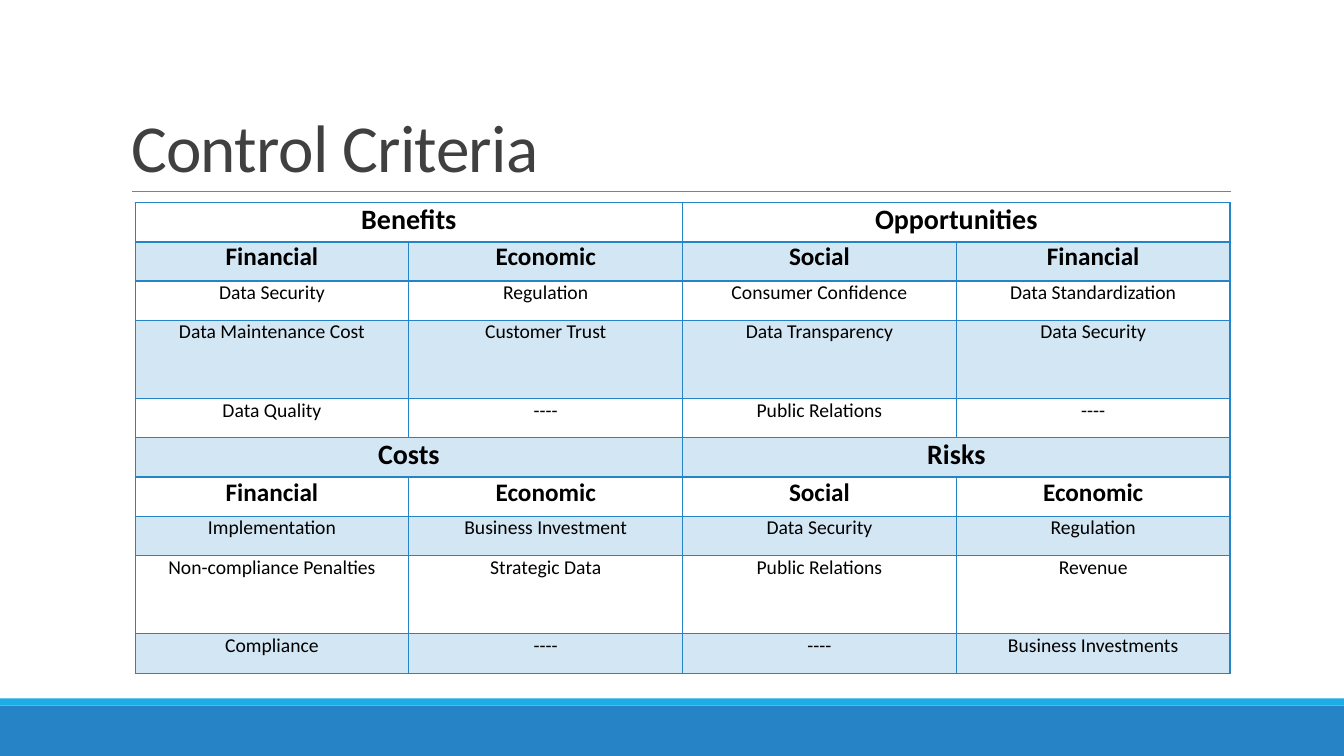
from dataclasses import dataclass

from lxml.etree import SubElement
from pptx import Presentation
from pptx.dml.color import RGBColor
from pptx.enum.shapes import MSO_CONNECTOR, MSO_SHAPE
from pptx.enum.text import MSO_ANCHOR, PP_ALIGN
from pptx.oxml.ns import qn
from pptx.util import Inches, Pt


@dataclass(frozen=True)
class Theme:
    font: str = "Calibri"
    blue: RGBColor = RGBColor(0x26, 0x83, 0xC6)
    cyan: RGBColor = RGBColor(0x1C, 0xAD, 0xE4)
    rule: RGBColor = RGBColor(0x80, 0x80, 0x80)
    title: RGBColor = RGBColor(0x40, 0x40, 0x40)
    ink: RGBColor = RGBColor(0, 0, 0)
    title_size: int = 48
    group_size: int = 20
    heading_size: int = 18
    body_size: int = 14


THEME = Theme()
WIDTH, HEIGHT = Inches(13.33), Inches(7.5)
TABLE_LEFT, TABLE_TOP = Inches(1.34), Inches(2.01)
COLUMN, ROW = Inches(10.86 / 4), Inches(4.67 / 12)

# Each block: two group names, four headings, three rows of criteria
BLOCKS = [
    (("Benefits", "Opportunities"),
     ("Financial", "Economic", "Social", "Financial"),
     [("Data Security", "Regulation", "Consumer Confidence", "Data Standardization"),
      ("Data Maintenance Cost", "Customer Trust", "Data Transparency", "Data Security"),
      ("Data Quality", "----", "Public Relations", "----")]),
    (("Costs", "Risks"),
     ("Financial", "Economic", "Social", "Economic"),
     [("Implementation", "Business Investment", "Data Security", "Regulation"),
      ("Non-compliance Penalties", "Strategic Data", "Public Relations", "Revenue"),
      ("Compliance", "----", "----", "Business Investments")]),
]
ROWS_PER_BLOCK = 5
TALL_ROWS = (3, 8)


def add_bar(slide, top, height, color):
    bar = slide.shapes.add_shape(MSO_SHAPE.RECTANGLE, 0, top, WIDTH, height)
    bar.shadow.inherit = False
    bar.fill.solid()
    bar.fill.fore_color.rgb = color
    bar.line.fill.background()


def add_rule(slide, left, right, y):
    rule = slide.shapes.add_connector(MSO_CONNECTOR.STRAIGHT, left, y, right, y)
    rule.line.color.rgb = THEME.rule
    rule.line.width = Pt(0.5)
    SubElement(rule._element.spPr, qn("a:effectLst"))


def set_title(slide, text):
    title = slide.shapes.title
    title.left, title.top = Inches(1.2), Inches(0.31)
    title.width, title.height = Inches(11), Inches(1.59)
    frame = title.text_frame
    frame.text = text
    frame.vertical_anchor = MSO_ANCHOR.BOTTOM
    line = frame.paragraphs[0]
    line.alignment = PP_ALIGN.LEFT
    line.line_spacing = 0.85
    line.font.name = THEME.font
    line.font.size = Pt(THEME.title_size)
    line.font.color.rgb = THEME.title
    line.runs[0].font._element.set("spc", "-50")


def set_borders(cell, bottom_width):
    properties = cell._tc.get_or_add_tcPr()
    for side in ("lnL", "lnR", "lnT", "lnB"):
        width = bottom_width if side == "lnB" else 1
        border = SubElement(properties, qn(f"a:{side}"), w=str(Pt(width)))
        fill = SubElement(border, qn("a:solidFill"))
        SubElement(fill, qn("a:srgbClr"), val=str(THEME.blue))


def set_band(cell, shaded):
    """Tint the cell with 20 % blue, or leave it clear."""
    if not shaded:
        cell.fill.background()
        return
    cell.fill.solid()
    cell.fill.fore_color.rgb = THEME.blue
    color = cell._tc.tcPr.find(qn("a:solidFill")).find(qn("a:srgbClr"))
    SubElement(color, qn("a:alpha"), val="20000")


def write_cell(cell, text, size, bold):
    cell.text = text
    line = cell.text_frame.paragraphs[0]
    line.alignment = PP_ALIGN.CENTER
    line.space_before = line.space_after = Pt(9)
    line.font.name = THEME.font
    line.font.size = Pt(size)
    line.font.bold = bold
    line.font.color.rgb = THEME.ink


def add_criteria_table(slide):
    row_count = ROWS_PER_BLOCK * len(BLOCKS)
    table = slide.shapes.add_table(row_count, 4, TABLE_LEFT, TABLE_TOP,
                                   4 * COLUMN, 12 * ROW).table
    table.first_row = table.horz_banding = False
    for column in table.columns:
        column.width = COLUMN
    for r, row in enumerate(table.rows):
        row.height = 2 * ROW if r in TALL_ROWS else ROW
        for cell in row.cells:
            cell.margin_left = cell.margin_right = Inches(0.07)
            cell.margin_top = cell.margin_bottom = 0
            set_borders(cell, 2 if r == 0 else 1)
            set_band(cell, shaded=r % 2 == 1)

    for b, (groups, headings, criteria) in enumerate(BLOCKS):
        top = b * ROWS_PER_BLOCK
        for g, group in enumerate(groups):
            table.cell(top, 2 * g).merge(table.cell(top, 2 * g + 1))
            write_cell(table.cell(top, 2 * g), group, THEME.group_size, True)
        for r, texts in enumerate([headings, *criteria]):
            is_heading = r == 0
            size = THEME.heading_size if is_heading else THEME.body_size
            for c, text in enumerate(texts):
                write_cell(table.cell(top + 1 + r, c), text, size, is_heading)


def main():
    deck = Presentation()
    deck.slide_width, deck.slide_height = WIDTH, HEIGHT
    slide = deck.slides.add_slide(deck.slide_layouts[5])
    add_bar(slide, Inches(7), Inches(0.5), THEME.blue)
    add_bar(slide, Inches(6.93), Inches(0.07), THEME.cyan)
    add_rule(slide, Inches(1.31), Inches(12.21), Inches(1.9))
    set_title(slide, "Control Criteria")
    add_criteria_table(slide)
    deck.save("out.pptx")


if __name__ == "__main__":
    main()
